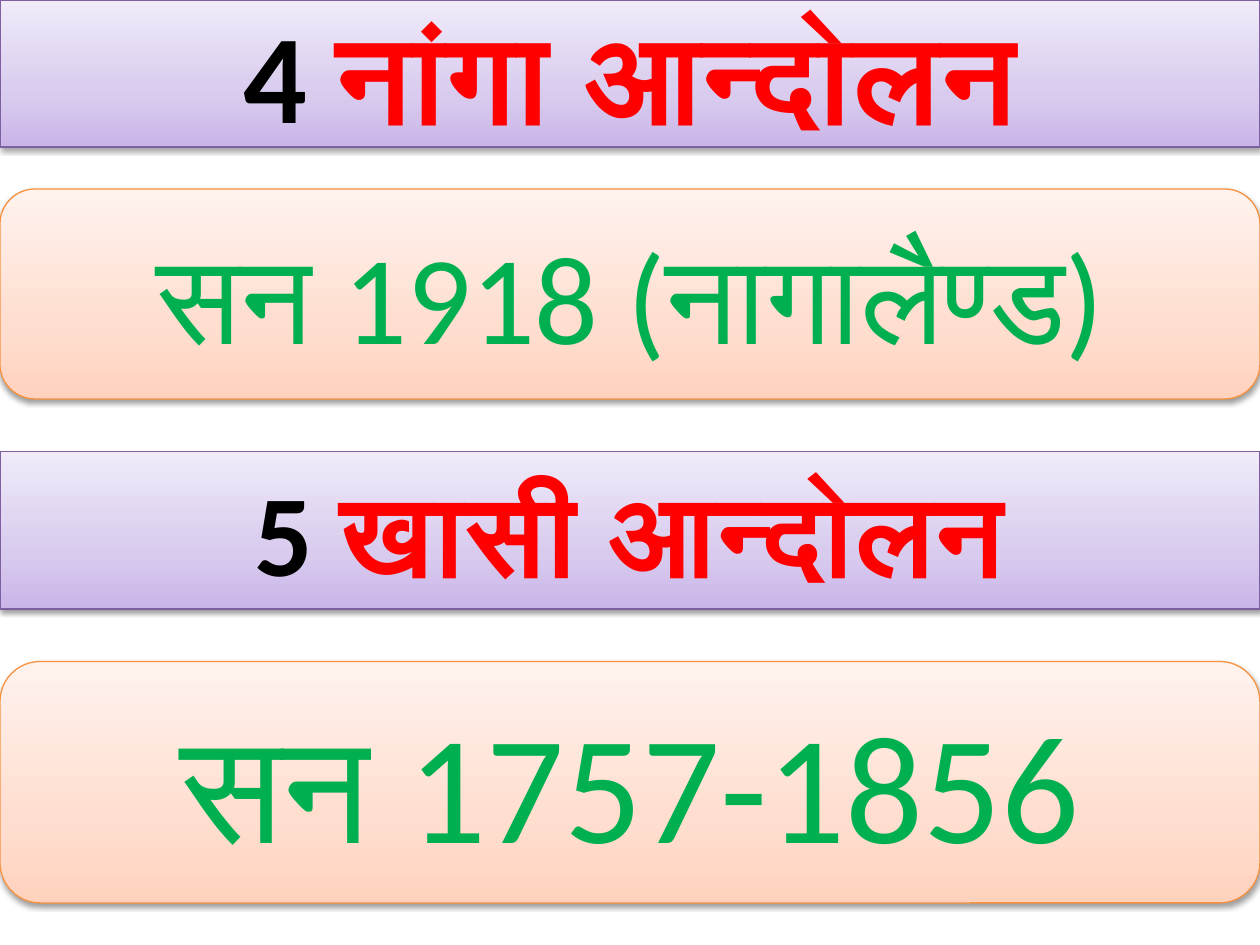
import pptx
import pptx.dml.color
import pptx.enum.shapes
import pptx.enum.text
import pptx.oxml
import pptx.oxml.ns
import pptx.util

SHAPES = pptx.enum.shapes.MSO_SHAPE

THEME = {
    "font": "Calibri",
    "line_width": 0.75,
    "number": "000000",
    "title": "FF0000",
    "date": "00B050",
    "heading": {
        "shape": SHAPES.RECTANGLE,
        "line": "7D60A0",
        "stops": [(0, "C9B5E8"), (35, "D8CBEE"), (100, "F0EAF9")],
        "bold": True,
    },
    "detail": {
        "shape": SHAPES.ROUNDED_RECTANGLE,
        "line": "F69240",
        "stops": [(0, "FFD2BD"), (35, "FFDED0"), (100, "FFF2ED")],
        "bold": False,
    },
    "shadow": {"color": "000000", "opacity": 38, "blur": 3.1, "distance": 1.6},
}

GRID_ROWS = 90

# style, first grid row, rows covered, type size, spans of (colour role, text)
BANDS = [
    ("heading", 0, 14, 72, [("number", "4 "), ("title", "नांगा आन्दोलन")]),
    ("detail", 18, 20, 72, [("date", "सन 1918 (नागालैण्ड)")]),
    ("heading", 43, 15, 66, [("number", "5 "), ("title", "खासी आन्दोलन")]),
    ("detail", 63, 23, 88, [("date", "सन 1757-1856")]),
]


def rgb(value):
    return pptx.dml.color.RGBColor.from_string(value)


def fill_upwards(box, stops):
    """Fill with a gradient whose first stop lies at the bottom edge."""
    box.fill.gradient()
    gradient = box._element.spPr.find(pptx.oxml.ns.qn("a:gradFill"))
    stop_xml = "".join(
        f'<a:gs pos="{share * 1000}"><a:srgbClr val="{color}"/></a:gs>'
        for share, color in stops
    )
    gradient.getparent().replace(gradient, pptx.oxml.parse_xml(
        f'<a:gradFill {pptx.oxml.ns.nsdecls("a")} rotWithShape="1">'
        f'<a:gsLst>{stop_xml}</a:gsLst><a:lin ang="16200000" scaled="0"/>'
        '</a:gradFill>'
    ))


def cast_shadow(box, shadow):
    box.shadow.inherit = False
    effects = box._element.spPr.find(pptx.oxml.ns.qn("a:effectLst"))
    effects.append(pptx.oxml.parse_xml(
        f'<a:outerShdw {pptx.oxml.ns.nsdecls("a")}'
        f' blurRad="{pptx.util.Pt(shadow["blur"])}"'
        f' dist="{pptx.util.Pt(shadow["distance"])}"'
        ' dir="5400000" rotWithShape="0">'
        f'<a:srgbClr val="{shadow["color"]}">'
        f'<a:alpha val="{shadow["opacity"] * 1000}"/></a:srgbClr></a:outerShdw>'
    ))


def write_spans(box, spans, size, bold):
    frame = box.text_frame
    frame.word_wrap = True
    frame.vertical_anchor = pptx.enum.text.MSO_ANCHOR.MIDDLE
    para = frame.paragraphs[0]
    para.alignment = pptx.enum.text.PP_ALIGN.CENTER
    for role, text in spans:
        span = para.add_run()
        span.text = text
        span.font.name = THEME["font"]
        span.font.size = pptx.util.Pt(size)
        span.font.bold = bold
        span.font.color.rgb = rgb(THEME[role])


def main():
    deck = pptx.Presentation()
    deck.slide_width = pptx.util.Inches(10)
    deck.slide_height = pptx.util.Inches(7.5)
    page = deck.slides.add_slide(deck.slide_layouts[6])
    row_height = deck.slide_height / GRID_ROWS

    for style_name, first_row, rows, size, spans in BANDS:
        style = THEME[style_name]
        box = page.shapes.add_shape(
            style["shape"], 0, round(first_row * row_height),
            deck.slide_width, round(rows * row_height),
        )
        fill_upwards(box, style["stops"])
        box.line.color.rgb = rgb(style["line"])
        box.line.width = pptx.util.Pt(THEME["line_width"])
        cast_shadow(box, THEME["shadow"])
        write_spans(box, spans, size, style["bold"])

    deck.save("out.pptx")


if __name__ == "__main__":
    main()
